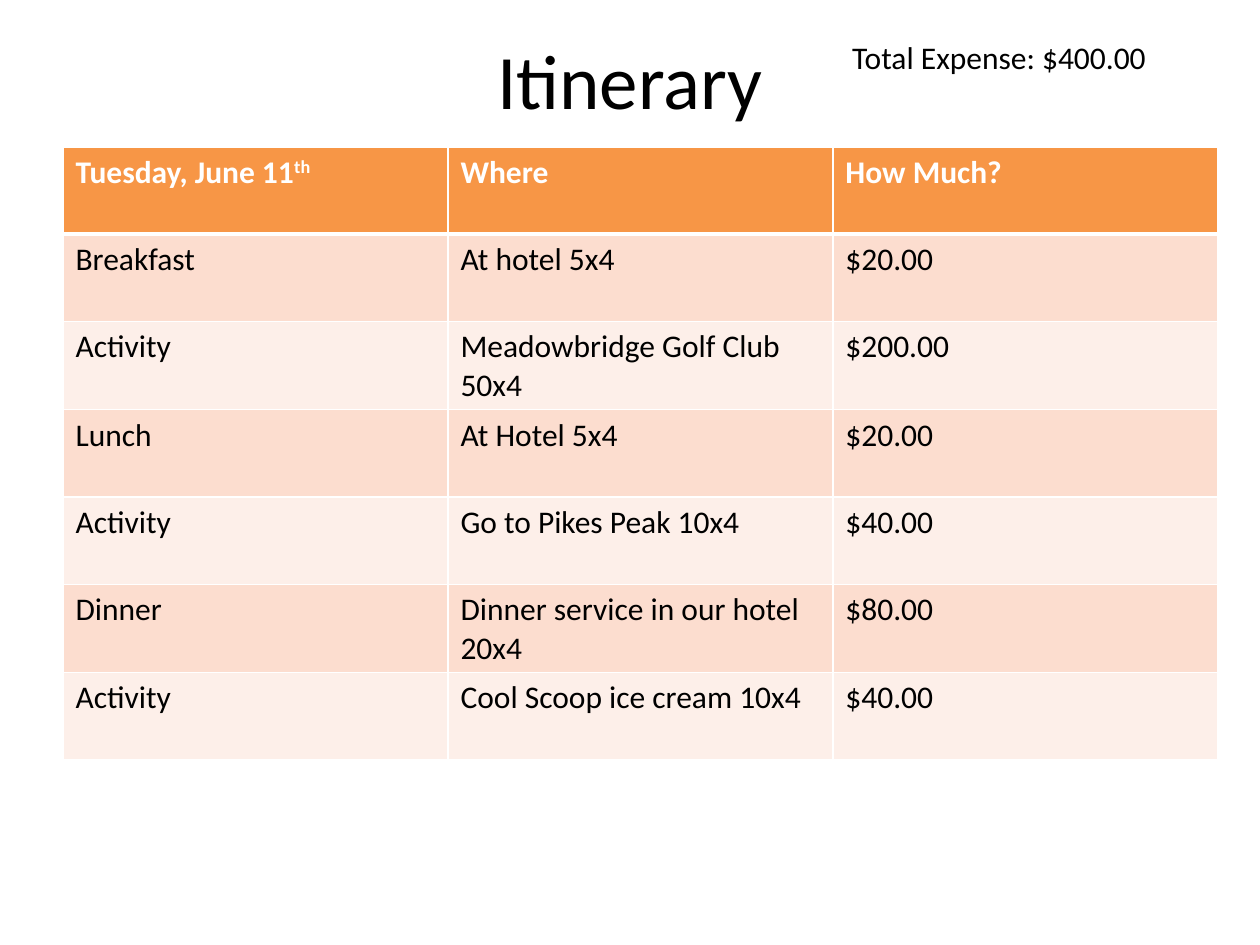
from dataclasses import dataclass

from lxml.etree import SubElement
from pptx import Presentation
from pptx.dml.color import RGBColor
from pptx.enum.text import MSO_ANCHOR, PP_ALIGN
from pptx.oxml.ns import qn
from pptx.util import Cm, Pt


@dataclass(frozen=True)
class Theme:
    font: str = "Calibri"
    title_size: int = 44
    body_size: int = 18
    text: str = "000000"
    header_text: str = "FFFFFF"
    header_fill: str = "F79646"
    bands: tuple = ("FCDDCF", "FDEFE9")
    border: str = "FFFFFF"
    thin: int = 1
    thick: int = 3


THEME = Theme()
HEADINGS = ("Tuesday, June 11", "Where", "How Much?")
PLANS = (
    ("Breakfast", "At hotel 5x4", "$20.00"),
    ("Activity", "Meadowbridge Golf Club 50x4", "$200.00"),
    ("Lunch", "At Hotel 5x4", "$20.00"),
    ("Activity", "Go to Pikes Peak 10x4", "$40.00"),
    ("Dinner", "Dinner service in our hotel 20x4", "$80.00"),
    ("Activity", "Cool Scoop ice cream 10x4", "$40.00"),
)
COLUMN_WIDTH = Cm(7.76)
ROW_HEIGHT = Cm(1.76)


def style_paragraph(para, size, color, bold=False):
    para.font.name = THEME.font
    para.font.size = Pt(size)
    para.font.bold = bold
    para.font.color.rgb = RGBColor.from_string(color)


def add_text(page, text, left, top, width, height, size,
             align=PP_ALIGN.LEFT, anchor=MSO_ANCHOR.TOP):
    box = page.shapes.add_textbox(left, top, width, height)
    frame = box.text_frame
    frame.word_wrap = True
    frame.vertical_anchor = anchor
    para = frame.paragraphs[0]
    para.text = text
    para.alignment = align
    style_paragraph(para, size, THEME.text)


def add_superscript(para, text):
    span = para.add_run()
    span.text = text
    span._r.get_or_add_rPr().set("baseline", "30000")


def set_borders(cell, top, bottom):
    """Draw all four sides; must run before the fill, which follows them in the XML."""
    properties = cell._tc.get_or_add_tcPr()
    sides = {"L": THEME.thin, "R": THEME.thin, "T": top, "B": bottom}
    for side, width in sides.items():
        line = SubElement(properties, qn(f"a:ln{side}"), w=str(Pt(width)))
        fill = SubElement(line, qn("a:solidFill"))
        SubElement(fill, qn("a:srgbClr"), val=THEME.border)


def style_cell(cell, row_index):
    is_header = row_index == 0
    set_borders(cell,
                top=THEME.thick if row_index == 1 else THEME.thin,
                bottom=THEME.thick if is_header else THEME.thin)
    fill = THEME.header_fill if is_header else THEME.bands[(row_index - 1) % 2]
    cell.fill.solid()
    cell.fill.fore_color.rgb = RGBColor.from_string(fill)
    color = THEME.header_text if is_header else THEME.text
    style_paragraph(cell.text_frame.paragraphs[0], THEME.body_size, color, is_header)


def add_itinerary(page, left, top):
    rows = (HEADINGS, *PLANS)
    table = page.shapes.add_table(
        len(rows), len(HEADINGS), left, top,
        COLUMN_WIDTH * len(HEADINGS), ROW_HEIGHT * len(rows)).table
    table.first_row = False
    table.horz_banding = False
    for column in table.columns:
        column.width = COLUMN_WIDTH
    for row_index, values in enumerate(rows):
        table.rows[row_index].height = ROW_HEIGHT
        for column_index, value in enumerate(values):
            cell = table.cell(row_index, column_index)
            cell.text = value
            style_cell(cell, row_index)
    add_superscript(table.cell(0, 0).text_frame.paragraphs[0], "th")


def main():
    deck = Presentation()
    deck.slide_width, deck.slide_height = Cm(25.4), Cm(19.05)
    page = deck.slides.add_slide(deck.slide_layouts[6])
    add_text(page, "Itinerary", Cm(1.27), Cm(0), Cm(22.86), Cm(3.18),
             THEME.title_size, PP_ALIGN.CENTER, MSO_ANCHOR.MIDDLE)
    add_text(page, "Total Expense: $400.00", Cm(16.93), Cm(0.64), Cm(7.83), Cm(1.03),
             THEME.body_size)
    add_itinerary(page, Cm(1.27), Cm(2.96))
    deck.save("out.pptx")


if __name__ == "__main__":
    main()
